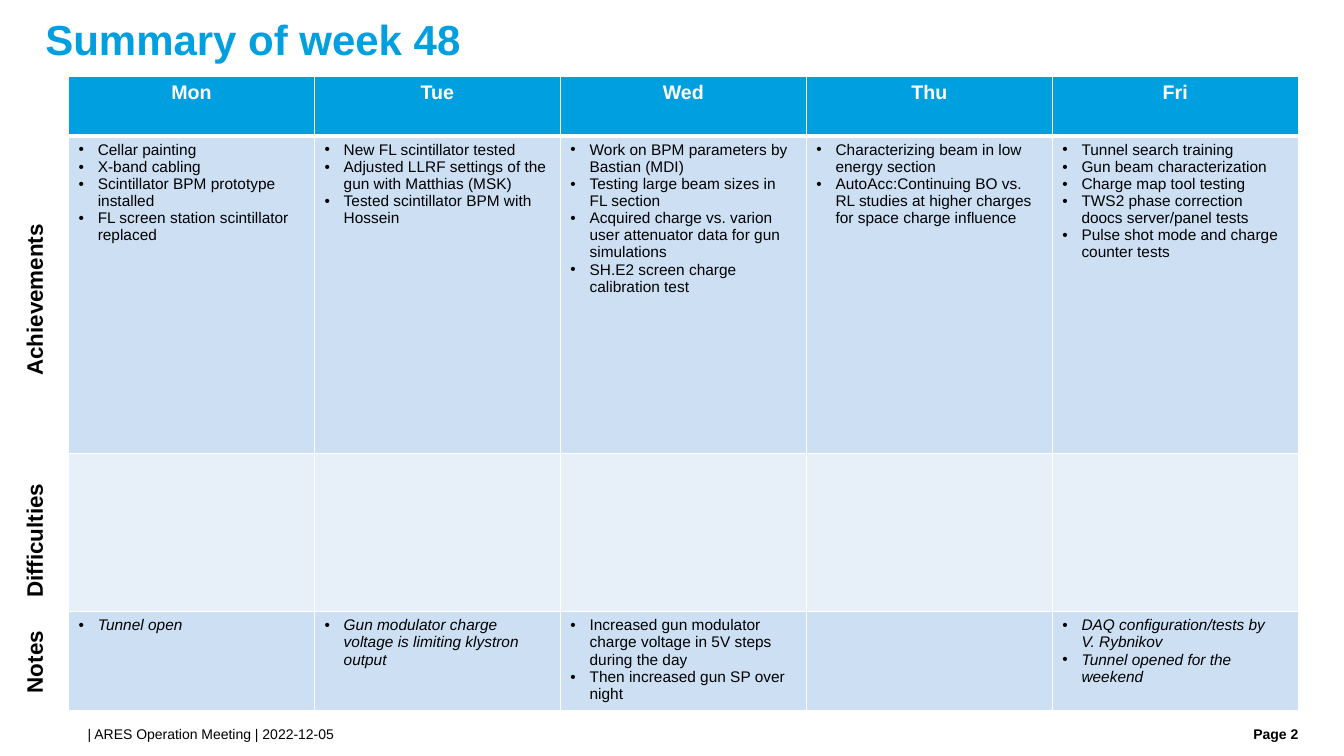
from dataclasses import dataclass

from lxml import etree
from pptx import Presentation
from pptx.dml.color import RGBColor
from pptx.enum.text import MSO_ANCHOR, MSO_AUTO_SIZE, PP_ALIGN
from pptx.oxml.ns import qn
from pptx.util import Emu, Inches, Pt

LEFT, CENTER, RIGHT = PP_ALIGN.LEFT, PP_ALIGN.CENTER, PP_ALIGN.RIGHT
TOP, NO_FIT = MSO_ANCHOR.TOP, MSO_AUTO_SIZE.NONE

COLORS = {
    "accent": "009FDF",
    "band": "CCDFF3",
    "pale": "E7F0F9",
    "white": "FFFFFF",
    "black": "000000",
}
FONT = "Arial"

# Square layout grid, ten units to the inch
UNIT = Inches(0.1)
SLIDE_COLS, SLIDE_ROWS = 133.33, 75
TABLE_LEFT, TABLE_TOP = 6.8, 7.6
DAY_COLS, HEADER_ROWS = 24.4, 5.9
LABEL_CENTER, LABEL_ROWS = 3.4, 3.7
BULLET_INDENT = 1.9


@dataclass(frozen=True)
class Entry:
    items: tuple[str, ...] = ()
    italic: bool = False


@dataclass(frozen=True)
class Band:
    label: str
    label_length: float
    label_middle: float
    rows: float
    fill: str
    entries: tuple[Entry, ...]


@dataclass(frozen=True)
class Caption:
    text: str
    left: float
    top: float
    cols: float
    rows: float
    size: int = 10
    bold: bool = False
    align: PP_ALIGN = LEFT
    rotation: int = 0


DAYS = ("Mon", "Tue", "Wed", "Thu", "Fri")
BANDS = (
    Band("Achievements", 17.2, 29.65, 31.5, "band", (
        Entry(("Cellar painting", "X-band cabling",
               "Scintillator BPM prototype installed",
               "FL screen station scintillator replaced")),
        Entry(("New FL scintillator tested",
               "Adjusted LLRF settings of the gun with Matthias (MSK)",
               "Tested scintillator BPM with Hossein")),
        Entry(("Work on BPM parameters by Bastian (MDI)",
               "Testing large beam sizes in FL section",
               "Acquired charge vs. varion user attenuator data for gun simulations",
               "SH.E2 screen charge calibration test")),
        Entry(("Characterizing beam in low energy section",
               "AutoAcc:Continuing BO vs. RL studies at higher charges "
               "for space charge influence")),
        Entry(("Tunnel search training", "Gun beam characterization",
               "Charge map tool testing",
               "TWS2 phase correction doocs server/panel tests",
               "Pulse shot mode and charge counter tests")),
    )),
    Band("Difficulties", 13.5, 53.55, 15.7, "pale", (Entry(),) * len(DAYS)),
    Band("Notes", 8.2, 65.65, 9.8, "band", (
        Entry(("Tunnel open",), italic=True),
        Entry(("Gun modulator charge voltage is limiting klystron output",), italic=True),
        Entry(("Increased gun modulator charge voltage in 5V steps during the day",
               "Then increased gun SP over night")),
        Entry(),
        Entry(("DAQ configuration/tests by\nV. Rybnikov",
               "Tunnel opened for the weekend"), italic=True),
    )),
)
FOOTERS = (
    Caption("| ARES Operation Meeting | 2022-12-05", 8.7, 72, 108.8, 2),
    Caption("Page 2", 118.6, 72, 10.2, 2, bold=True, align=RIGHT),
)


def grid(units: float) -> Emu:
    return Emu(round(units * UNIT))


def place(shape, left: float, top: float, cols: float, rows: float) -> None:
    shape.left, shape.top = grid(left), grid(top)
    shape.width, shape.height = grid(cols), grid(rows)


def style(paragraph, size: int, color: str, bold: bool = False,
          italic: bool = False, align: PP_ALIGN = LEFT) -> None:
    paragraph.alignment = align
    for run in paragraph.runs:
        font = run.font
        font.name, font.size = FONT, Pt(size)
        font.bold, font.italic = bold, italic
        font.color.rgb = RGBColor.from_string(COLORS[color])


def clear_insets(frame) -> None:
    frame.margin_left = frame.margin_right = 0
    frame.margin_top = frame.margin_bottom = 0
    frame.vertical_anchor = TOP
    frame.auto_size = NO_FIT


def add_caption(slide, caption: Caption) -> None:
    box = slide.shapes.add_textbox(0, 0, 0, 0)
    place(box, caption.left, caption.top, caption.cols, caption.rows)
    box.rotation = caption.rotation
    frame = box.text_frame
    if not caption.rotation:
        clear_insets(frame)
    frame.word_wrap = not caption.rotation
    frame.text = caption.text
    style(frame.paragraphs[0], caption.size, "black", caption.bold, align=caption.align)


def format_cell(cell, fill: str, bottom_width: int = 1) -> None:
    properties = cell._tc.get_or_add_tcPr()
    for side, width in (("L", 1), ("R", 1), ("T", 1), ("B", bottom_width)):
        line = etree.SubElement(properties, qn(f"a:ln{side}"), w=str(Pt(width)))
        solid = etree.SubElement(line, qn("a:solidFill"))
        etree.SubElement(solid, qn("a:srgbClr"), val=COLORS["white"])
    cell.fill.solid()
    cell.fill.fore_color.rgb = RGBColor.from_string(COLORS[fill])


def add_bullet(paragraph) -> None:
    properties = paragraph._p.get_or_add_pPr()
    properties.set("marL", str(grid(BULLET_INDENT)))
    properties.set("indent", str(-grid(BULLET_INDENT)))
    etree.SubElement(properties, qn("a:buFont"), typeface=FONT)
    etree.SubElement(properties, qn("a:buChar"), char="•")


def write_entry(cell, entry: Entry) -> None:
    frame = cell.text_frame
    for index, item in enumerate(entry.items):
        paragraph = frame.add_paragraph() if index else frame.paragraphs[0]
        paragraph.text = item
        add_bullet(paragraph)
        style(paragraph, 11, "black", italic=entry.italic)


def add_title(slide, text: str) -> None:
    title = slide.shapes.title
    place(title, 4.5, 1.9, 124.4, 4.9)
    clear_insets(title.text_frame)
    title.text_frame.text = text
    heading = title.text_frame.paragraphs[0]
    heading.line_spacing = 0.9
    style(heading, 30, "accent", bold=True)


def add_week_table(slide) -> None:
    heights = [HEADER_ROWS] + [band.rows for band in BANDS]
    week = slide.shapes.add_table(
        len(heights), len(DAYS), grid(TABLE_LEFT), grid(TABLE_TOP),
        grid(DAY_COLS * len(DAYS)), grid(sum(heights))).table
    for row, height in zip(week.rows, heights):
        row.height = grid(height)
    for column, day in enumerate(DAYS):
        week.columns[column].width = grid(DAY_COLS)
        header = week.cell(0, column)
        format_cell(header, "accent", bottom_width=3)
        header.text_frame.text = day
        style(header.text_frame.paragraphs[0], 14, "white", bold=True, align=CENTER)
        for row, band in enumerate(BANDS, start=1):
            cell = week.cell(row, column)
            format_cell(cell, band.fill)
            write_entry(cell, band.entries[column])


def main() -> None:
    deck = Presentation()
    deck.slide_width, deck.slide_height = grid(SLIDE_COLS), grid(SLIDE_ROWS)
    slide = deck.slides.add_slide(deck.slide_layouts[5])

    add_title(slide, "Summary of week 48")
    add_week_table(slide)

    # Row labels beside the table, reading upwards
    for band in BANDS:
        add_caption(slide, Caption(
            band.label, LABEL_CENTER - band.label_length / 2,
            band.label_middle - LABEL_ROWS / 2, band.label_length, LABEL_ROWS,
            size=16, bold=True, rotation=270))

    for footer in FOOTERS:
        add_caption(slide, footer)
    deck.save("out.pptx")


if __name__ == "__main__":
    main()
